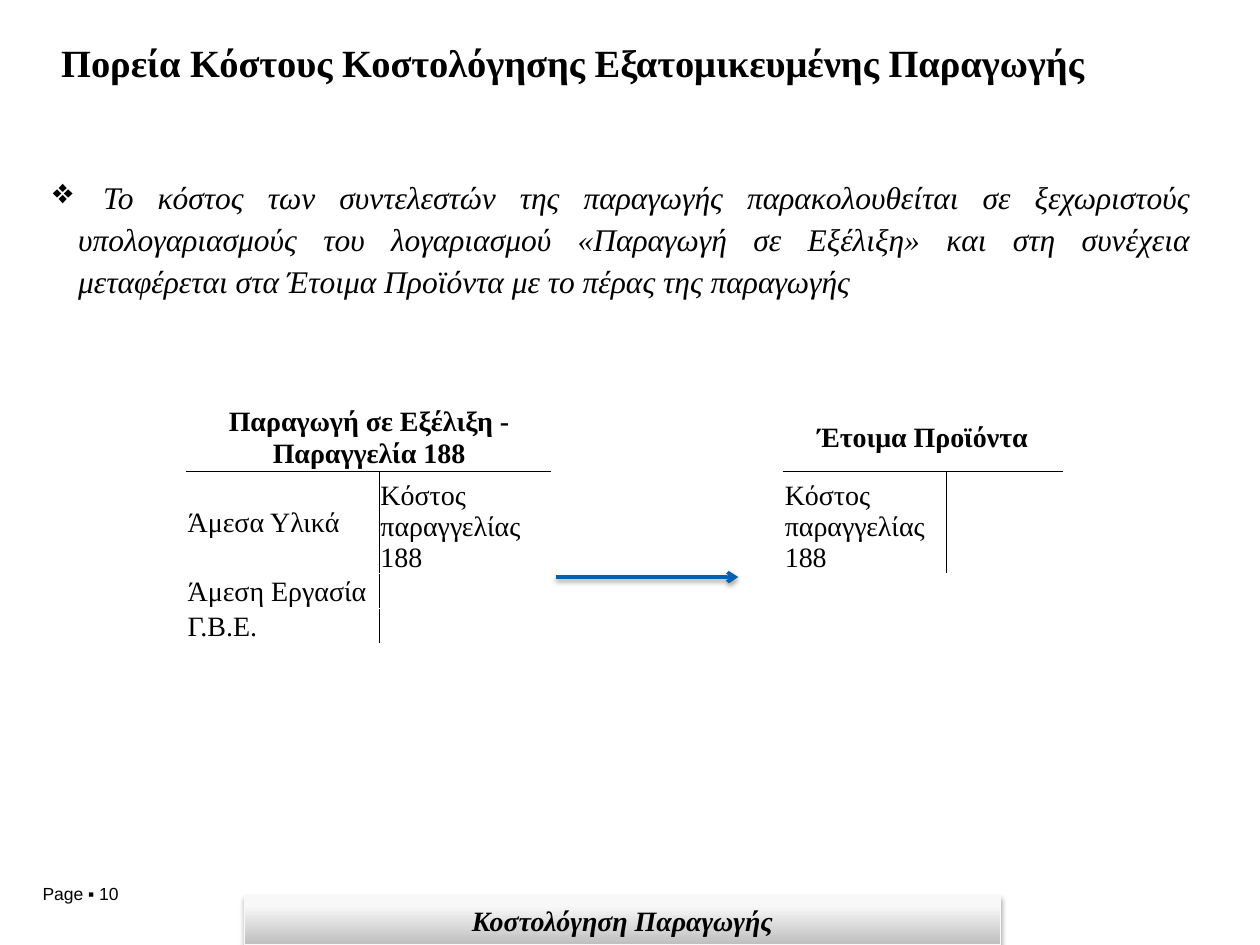
from lxml.etree import SubElement as Sub
from pptx import Presentation
from pptx.dml.color import RGBColor as RGB
from pptx.enum.shapes import MSO_CONNECTOR as LINK, MSO_SHAPE as SHAPE
from pptx.enum.text import MSO_ANCHOR as ANCHOR, PP_ALIGN as ALIGN
from pptx.oxml.ns import qn
from pptx.util import Inches, Pt

WIDE, HIGH = 10, 7.5
SERIF = "Times New Roman"
COLS = [1.53, 1.37, 0.92, 0.92, 1.29, 0.92]
ROWS = [0.54, 0.62, 0.21, 0.21]
COST = "Κόστος παραγγελίας 188"
BODY = (
    "Το κόστος των συντελεστών της παραγωγής παρακολουθείται σε ξεχωριστούς "
    "υπολογαριασμούς του λογαριασμού «Παραγωγή σε Εξέλιξη» και στη συνέχεια "
    "μεταφέρεται στα Έτοιμα Προϊόντα με το πέρας της παραγωγής"
)


def tint(code):
    return RGB.from_string(code)


def place(x, y, w, h):
    return [Inches(v) for v in (x, y, w, h)]


def inset(item, left, top, right, low):
    item.margin_left, item.margin_top = Inches(left), Inches(top)
    item.margin_right, item.margin_bottom = Inches(right), Inches(low)


def write(para, text, size=16, face=SERIF, bold=False, slant=False,
          align=ALIGN.LEFT, space=None):
    para.alignment = align
    if space:
        para.line_spacing = space
    run = para.add_run()
    run.text = text
    font = run.font
    font.size, font.name = Pt(size), face
    font.bold, font.italic = bold, slant
    font.color.rgb = tint("000000")


def shade(shape, alpha, blur, dist):
    props = shape._element.spPr
    for old in props.findall(qn("a:effectLst")):
        props.remove(old)
    cast = Sub(Sub(props, qn("a:effectLst")), qn("a:outerShdw"),
               blurRad=str(Pt(blur)), dist=str(Pt(dist)), dir="5400000",
               algn="t", rotWithShape="0")
    hue = Sub(cast, qn("a:srgbClr"), val="000000")
    Sub(hue, qn("a:alpha"), val=str(alpha * 1000))


def add_box(slide, spot, pad):
    frame = slide.shapes.add_textbox(*place(*spot)).text_frame
    frame.word_wrap = True
    inset(frame, *pad)
    return frame.paragraphs[0]


def add_title(slide, text):
    title = slide.shapes.title
    title.left, title.top, title.width, title.height = place(0.34, 0.3, 8.41, 0.71)
    frame = title.text_frame
    frame.vertical_anchor = ANCHOR.TOP
    inset(frame, 0, 0.05, 0, 0.05)
    write(frame.paragraphs[0], text, size=22, bold=True,
          align=ALIGN.CENTER, space=0.9)


def add_body(slide):
    para = add_box(slide, (0.42, 1.35, 9.03, 1.17), (0, 0, 0, 0))
    props = para._p.get_or_add_pPr()
    props.set("marL", str(Inches(0.2)))
    props.set("indent", str(-Inches(0.2)))
    Sub(props, qn("a:buChar"), char="❖")
    write(para, " ", size=20, bold=True, align=ALIGN.JUSTIFY, space=1.1)
    write(para, BODY, size=18, slant=True, align=ALIGN.JUSTIFY, space=1.1)


def add_foot(slide, text):
    bar = slide.shapes.add_shape(SHAPE.RECTANGLE, *place(1.94, 7.11, 6, 0.39))
    bar.fill.gradient()
    bar.fill.gradient_angle = 90
    for stop, spot, code in zip(bar.fill.gradient_stops, (0, 0.8),
                                ("BEBEBE", "F8F8F8")):
        stop.position = spot
        stop.color.rgb = tint(code)
    bar.line.color.rgb, bar.line.width = tint("F9F9F9"), Pt(0.75)
    shade(bar, 35, 3.1, 1.8)
    frame = bar.text_frame
    frame.vertical_anchor = ANCHOR.MIDDLE
    inset(frame, 0, 0, 0, 0)
    write(frame.paragraphs[0], text, bold=True, slant=True, align=ALIGN.CENTER)


def add_arrow(slide, x, y, end):
    line = slide.shapes.add_connector(LINK.STRAIGHT, *place(x, y, end, y))
    line.line.color.rgb, line.line.width = tint("0061B2"), Pt(2)
    Sub(line.line._get_or_add_ln(), qn("a:tailEnd"), type="arrow")
    shade(line, 38, 3.1, 1.6)


def rule(cell, sides):
    for side in sides:
        edge = Sub(cell._tc.get_or_add_tcPr(), qn("a:ln" + side), w=str(Pt(0.5)))
        Sub(Sub(edge, qn("a:solidFill")), qn("a:srgbClr"), val="000000")


def fill_cell(cell, text, anchor=ANCHOR.MIDDLE, **form):
    cell.vertical_anchor = anchor
    write(cell.text_frame.paragraphs[0], text, **form)


def add_ledger(grid, col, head, debit, credit=()):
    top = grid.cell(0, col)
    top.merge(grid.cell(0, col + 1))
    fill_cell(top, head, bold=True, align=ALIGN.CENTER)
    for step, side, notes in ((0, "R", debit), (1, "L", credit)):
        rule(grid.cell(0, col + step), "B")
        for row in range(1, len(debit) + 1):
            rule(grid.cell(row, col + step), side + ("T" if row == 1 else ""))
        for row, note in enumerate(notes, 1):
            anchor = ANCHOR.BOTTOM if note == COST else ANCHOR.MIDDLE
            fill_cell(grid.cell(row, col + step), note, anchor)


def add_grid(slide):
    spot = place(1.48, 3.2, sum(COLS), sum(ROWS))
    grid = slide.shapes.add_table(len(ROWS), len(COLS), *spot).table
    grid.first_row = grid.horz_banding = False
    for col, width in zip(grid.columns, COLS):
        col.width = Inches(width)
    for row, height in zip(grid.rows, ROWS):
        row.height = Inches(height)
    add_ledger(grid, 0, "Παραγωγή σε Εξέλιξη - Παραγγελία 188",
               ["Άμεσα Υλικά", "Άμεση Εργασία", "Γ.Β.Ε."], [COST])
    add_ledger(grid, 4, "Έτοιμα Προϊόντα", [COST])
    for cell in grid.iter_cells():
        cell.fill.background()
        inset(cell, 0.01, 0.01, 0.01, 0)
        if not cell.text:
            para = cell.text_frame.paragraphs[0]
            Sub(para._p, qn("a:endParaRPr"), sz="1600")


def main():
    deck = Presentation()
    deck.slide_width, deck.slide_height = Inches(WIDE), Inches(HIGH)
    slide = deck.slides.add_slide(deck.slide_layouts[5])
    page = add_box(slide, (0.24, 6.96, 1.47, 0.27), (0.1, 0.05, 0.1, 0.05))
    write(page, "Page ▪ 10", size=10, face="Arial")
    add_title(slide, "Πορεία Κόστους Κοστολόγησης Εξατομικευμένης Παραγωγής")
    add_foot(slide, "Κοστολόγηση Παραγωγής")
    add_grid(slide)
    add_arrow(slide, 4.41, 4.58, 5.86)
    add_body(slide)
    deck.save("out.pptx")


if __name__ == "__main__":
    main()
